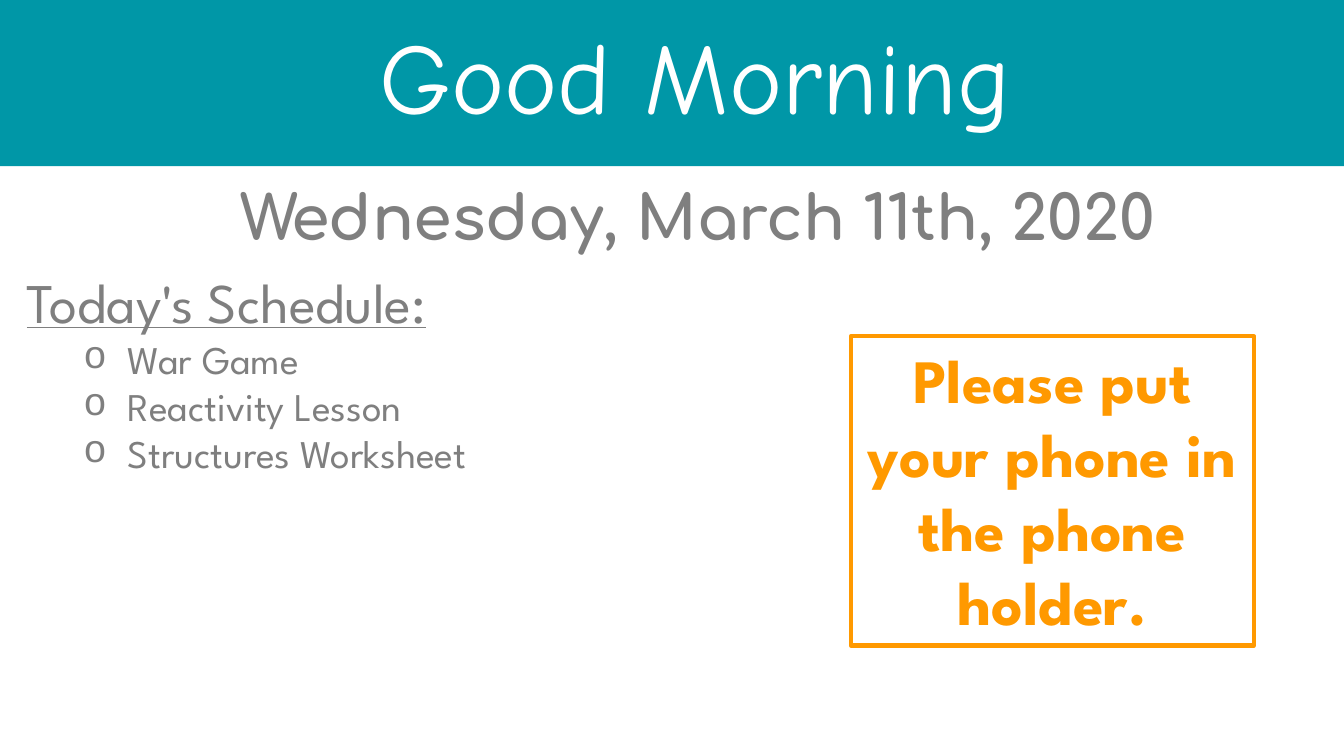
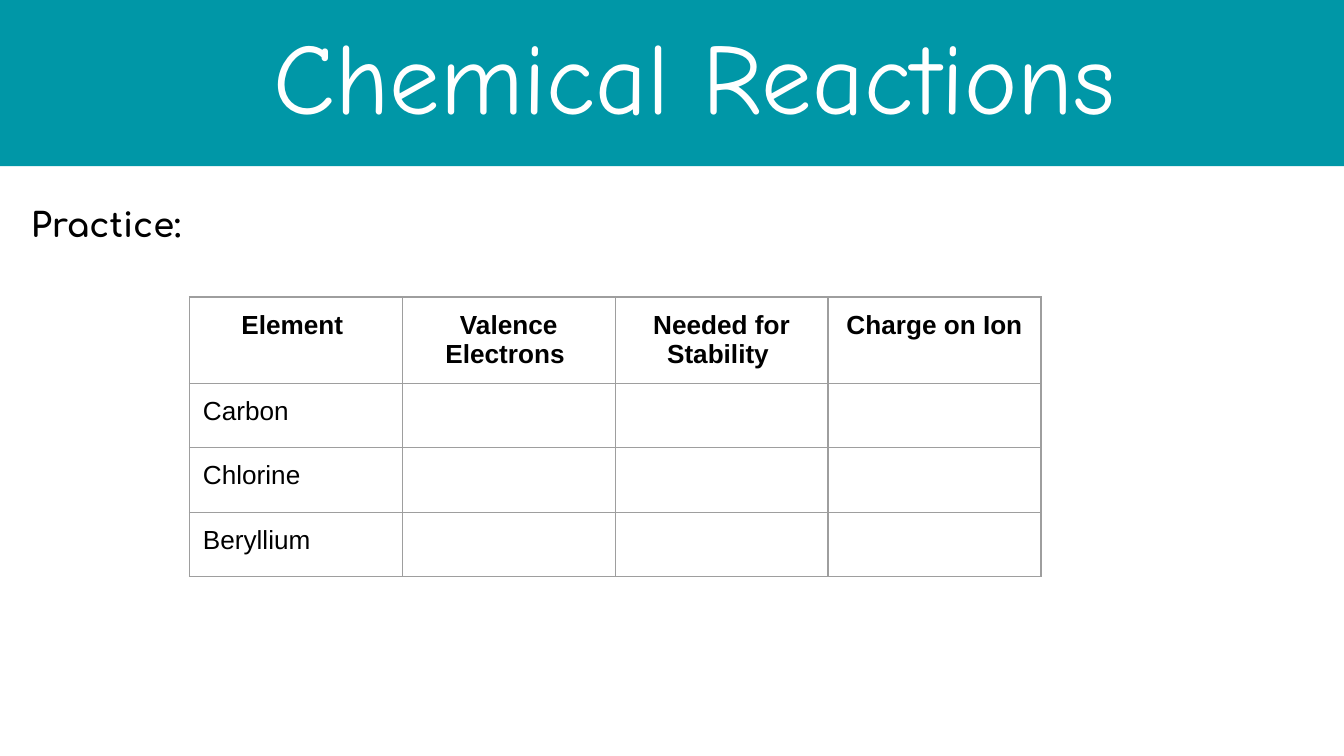
from dataclasses import dataclass

from lxml import etree
from pptx import Presentation
from pptx import util as u
from pptx.dml.color import RGBColor
from pptx.enum import shapes, text
from pptx.oxml import ns


@dataclass(frozen=True)
class Theme:
    teal: str = "0097A7"
    white: str = "FFFFFF"
    gray: str = "7F7F7F"
    orange: str = "FF9900"
    black: str = "000000"
    rule: str = "9E9E9E"
    title_font: str = "Comic Neue"
    text_font: str = "League Spartan"
    accent_font: str = "Comfortaa"
    table_font: str = "Arial"
    title_size: int = 54
    banner_size: int = 33
    heading_size: int = 30
    list_size: int = 21
    label_size: int = 18
    table_size: int = 14


theme = Theme()
presentation = Presentation()
presentation.slide_width = u.Inches(10)
presentation.slide_height = u.Inches(5.625)

# The grid: 100 columns by 100 rows
COLUMN = presentation.slide_width / 100
ROW = presentation.slide_height / 100
CENTER, LEFT = text.PP_ALIGN.CENTER, text.PP_ALIGN.LEFT


def place(shape, left, top, width, height, inset_x=0.07, inset_y=0.04):
    """Put a shape on the grid and set up its text frame."""
    shape.left, shape.width = int(left * COLUMN), int(width * COLUMN)
    shape.top, shape.height = int(top * ROW), int(height * ROW)
    frame = shape.text_frame
    frame.word_wrap = True
    frame.auto_size = text.MSO_AUTO_SIZE.NONE
    frame.vertical_anchor = text.MSO_ANCHOR.TOP
    frame.margin_left = frame.margin_right = u.Inches(inset_x)
    frame.margin_top = frame.margin_bottom = u.Inches(inset_y)
    return frame


def write(paragraph, words, font, size, color, align=LEFT, bold=False, bullet=None):
    """Fill a paragraph with one style, with or without a bullet."""
    paragraph.text = words
    paragraph.alignment = align
    paragraph.space_before = u.Pt(0)
    paragraph.font.name = font
    paragraph.font.size = u.Pt(size)
    paragraph.font.bold = bold
    paragraph.font.color.rgb = RGBColor.from_string(color)
    properties = paragraph.font._element.getparent()
    properties.set("marL", str(u.Inches(0.75 if bullet else 0)))
    properties.set("indent", str(u.Inches(-0.33 if bullet else 0)))
    marks = []
    if bullet:
        bullet_color = etree.Element(ns.qn("a:buClr"))
        etree.SubElement(bullet_color, ns.qn("a:srgbClr"), val=color)
        bullet_font = etree.Element(ns.qn("a:buFont"), typeface="Courier New")
        marks = [bullet_color, bullet_font, etree.Element(ns.qn("a:buChar"), char=bullet)]
    else:
        marks = [etree.Element(ns.qn("a:buNone"))]
    for mark in marks:
        paragraph.font._element.addprevious(mark)


# Both slides: teal band with a centred title
slides = []
for title in ("Good Morning", "Chemical Reactions"):
    slide = presentation.slides.add_slide(presentation.slide_layouts[1])
    band = slide.shapes.add_shape(shapes.MSO_SHAPE.RECTANGLE, 0, 0, 0, 0)
    place(band, 0, 0, 100, 22)
    band.shadow.inherit = False
    band.fill.solid()
    band.fill.fore_color.rgb = RGBColor.from_string(theme.teal)
    band.line.fill.background()
    slide.shapes.title._element.addprevious(band._element)

    frame = place(slide.shapes.title, 8.6, 1.1, 86.2, 19.4)
    frame.vertical_anchor = text.MSO_ANCHOR.MIDDLE
    write(frame.paragraphs[0], title, theme.title_font, theme.title_size, theme.white, CENTER)
    frame.paragraphs[0].line_spacing = 0.9
    slides.append(slide)
morning, reactions = slides

# Morning: schedule
frame = place(morning.placeholders[1], 1.3, 34.7, 56.1, 39.5)
heading = frame.paragraphs[0]
write(heading, "Today's Schedule:", theme.text_font, theme.heading_size, theme.gray)
heading.font.underline = True
for activity in ("War Game", "Reactivity Lesson", "Structures Worksheet"):
    paragraph = frame.add_paragraph()
    paragraph.level = 1
    write(paragraph, activity, theme.text_font, theme.list_size, theme.gray, bullet="o")

# Morning: date
date = morning.shapes.add_textbox(0, 0, 0, 0)
frame = place(date, 10.5, 22.9, 82.9, 10.8)
write(frame.paragraphs[0], "Wednesday, March 11th, 2020", theme.accent_font,
      theme.banner_size, theme.gray, CENTER, bold=True)

# Morning: phone reminder
reminder = morning.shapes.add_shape(shapes.MSO_SHAPE.RECTANGLE, 0, 0, 0, 0)
frame = place(reminder, 63.3, 44.5, 30, 40.9)
reminder.shadow.inherit = False
reminder.fill.background()
reminder.line.color.rgb = RGBColor.from_string(theme.orange)
reminder.line.width = u.Pt(2.25)
write(frame.paragraphs[0], "Please put your phone in the phone holder.", theme.text_font,
      theme.banner_size, theme.orange, CENTER, bold=True)

# Reactions: practice label
frame = place(reactions.placeholders[1], 1.3, 25.2, 96.7, 72.2, 0.1, 0.1)
write(frame.paragraphs[0], "Practice:", theme.accent_font, theme.label_size,
      theme.black, bold=True)

# Reactions: practice table
headers = ("Element ", "Valence Electrons ", "Needed for Stability ", "Charge on Ion")
elements = ("Carbon", "Chlorine", "Beryllium")
rows = [headers] + [(element, "", "", "") for element in elements]
column_width, header_height, row_height = 15.84, 11.4, 8.53
table = reactions.shapes.add_table(
    len(rows), len(headers), int(14.1 * COLUMN), int(39.3 * ROW),
    int(len(headers) * column_width * COLUMN),
    int((header_height + len(elements) * row_height) * ROW)).table
table.first_row = table.horz_banding = False
for column in table.columns:
    column.width = int(column_width * COLUMN)
for row_index, row in enumerate(rows):
    is_header = row_index == 0
    table.rows[row_index].height = int((header_height if is_header else row_height) * ROW)
    for column_index, words in enumerate(row):
        cell = table.cell(row_index, column_index)
        cell.margin_left = cell.margin_right = u.Inches(0.1)
        cell.margin_top = cell.margin_bottom = u.Inches(0.1)
        cell.fill.background()
        write(cell.text_frame.paragraphs[0], words, theme.table_font, theme.table_size,
              theme.black, CENTER if is_header else LEFT, bold=is_header)
        cell_properties = cell._tc.get_or_add_tcPr()
        for position, side in enumerate(("lnL", "lnR", "lnT", "lnB")):
            border = etree.Element(ns.qn("a:" + side), w=str(u.Pt(0.75)))
            fill = etree.SubElement(border, ns.qn("a:solidFill"))
            etree.SubElement(fill, ns.qn("a:srgbClr"), val=theme.rule)
            cell_properties.insert(position, border)

presentation.save("out.pptx")
